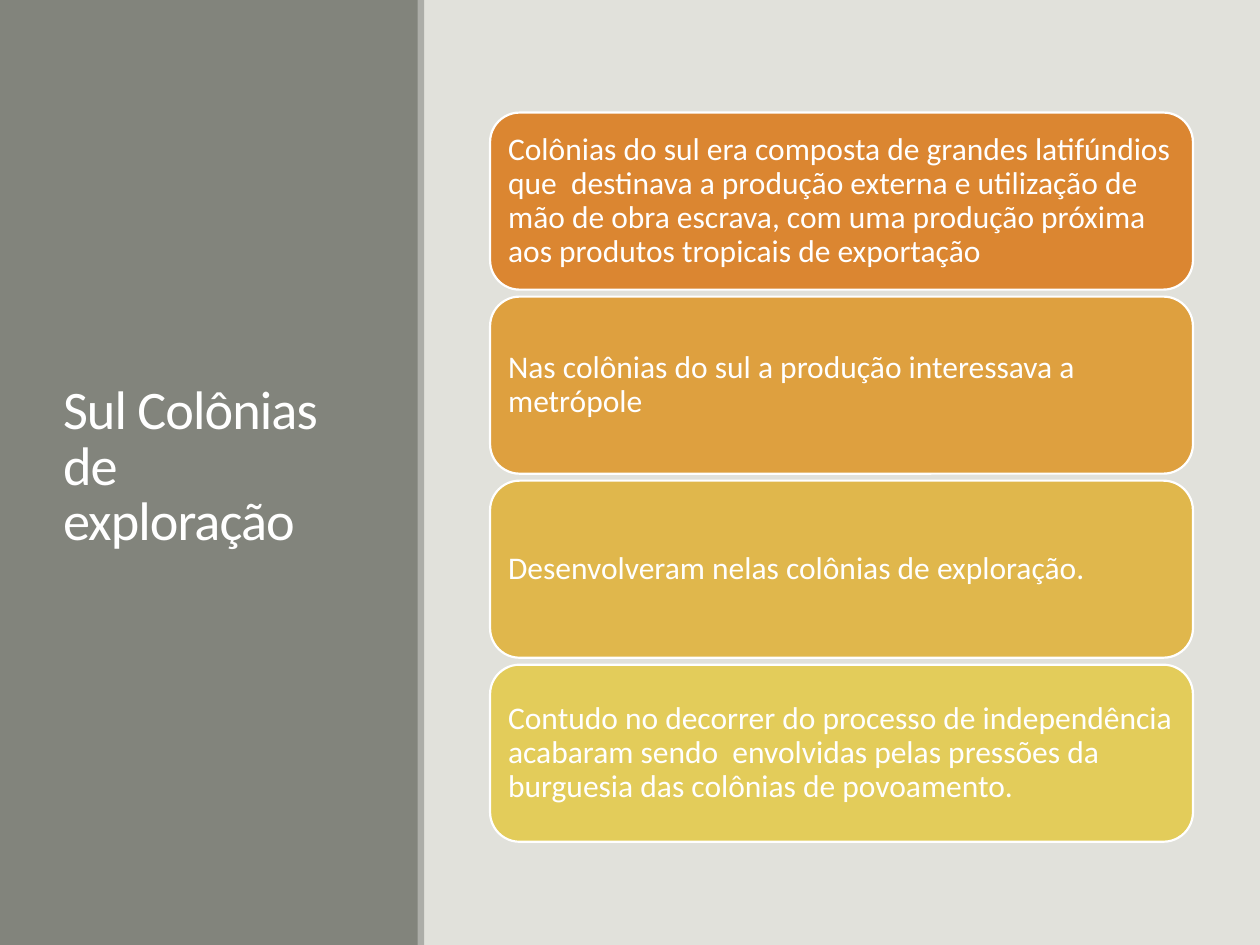
from pptx import Presentation
from pptx.dml.color import RGBColor
from pptx.enum.shapes import MSO_SHAPE
from pptx.enum.text import MSO_ANCHOR, MSO_AUTO_SIZE, PP_ALIGN
from pptx.util import Cm, Pt

COLORS = {
    "back": "E1E1DB",
    "panel": "82847C",
    "edge": "ACADA8",
    "white": "FFFFFF",
}

CARDS = [
    ("DB8631", "Colônias do sul era composta de grandes latifúndios que  destinava "
               "a produção externa e utilização de mão de obra escrava, com uma "
               "produção próxima aos produtos tropicais de exportação"),
    ("DEA03F", "Nas colônias do sul a produção interessava a metrópole"),
    ("E0B74C", "Desenvolveram nelas colônias de exploração."),
    ("E3CC5A", "Contudo no decorrer do processo de independência acabaram sendo  "
               "envolvidas pelas pressões da burguesia das colônias de povoamento."),
]


def rgb(name):
    return RGBColor.from_string(COLORS.get(name, name))


def write(frame, text, size=18, color="white", font="Calibri", line=0.9,
          after=0, track=0, pad=(0.25, 0.13, 0.25, 0.13)):
    """Fill a text frame; pad is left, top, right, bottom in cm."""
    frame.word_wrap = True
    frame.auto_size = MSO_AUTO_SIZE.NONE
    frame.vertical_anchor = MSO_ANCHOR.MIDDLE
    (frame.margin_left, frame.margin_top,
     frame.margin_right, frame.margin_bottom) = map(Cm, pad)
    para = frame.paragraphs[0]
    para.alignment = PP_ALIGN.LEFT
    para.line_spacing = line
    para.space_after = Pt(after)
    run = para.add_run()
    run.text = text
    run.font.name = font
    run.font.size = Pt(size)
    run.font.color.rgb = rgb(color)
    if track:
        run.font._element.set("spc", str(int(track * 100)))


class Deck:
    def __init__(self):
        self.file = Presentation()
        self.file.slide_width, self.file.slide_height = Cm(25.4), Cm(19.05)
        self.slide = self.file.slides.add_slide(self.file.slide_layouts[5])
        fill = self.slide.background.fill
        fill.solid()
        fill.fore_color.rgb = rgb("back")

    def block(self, box, color, kind=MSO_SHAPE.RECTANGLE):
        shape = self.slide.shapes.add_shape(kind, *map(Cm, box))
        shape.shadow.inherit = False
        shape.fill.solid()
        shape.fill.fore_color.rgb = rgb(color)
        shape.line.fill.background()
        return shape

    def card(self, box, color, text):
        shape = self.block(box, color, MSO_SHAPE.ROUNDED_RECTANGLE)
        shape.line.color.rgb = rgb("white")
        shape.line.width = Pt(1.25)
        write(shape.text_frame, text, after=6.3, pad=(0.19, 0.19, 0.17, 0.19))

    def title(self, box, text):
        """Place the title above everything drawn so far."""
        shape = self.slide.shapes.title
        shape.left, shape.top, shape.width, shape.height = map(Cm, box)
        shape.element.getparent().append(shape.element)
        write(shape.text_frame, text, size=31, line=0.85, track=-0.5,
              pad=(0.25, 0.13, 0.35, 0.13))


def main():
    deck = Deck()
    deck.block((0, 0, 25.4, 19.05), "back")
    deck.block((0, 0, 8.43, 19.05), "panel")
    deck.title((1.02, 1.43, 6.43, 16.03), "Sul Colônias de exploração")
    deck.block((8.42, 0, 0.13, 19.05), "edge")
    top, step = 2.27, 3.71
    for row, (color, text) in enumerate(CARDS):
        deck.card((9.88, top + row * step, 14.17, 3.57), color, text)
    deck.file.save("out.pptx")


if __name__ == "__main__":
    main()
